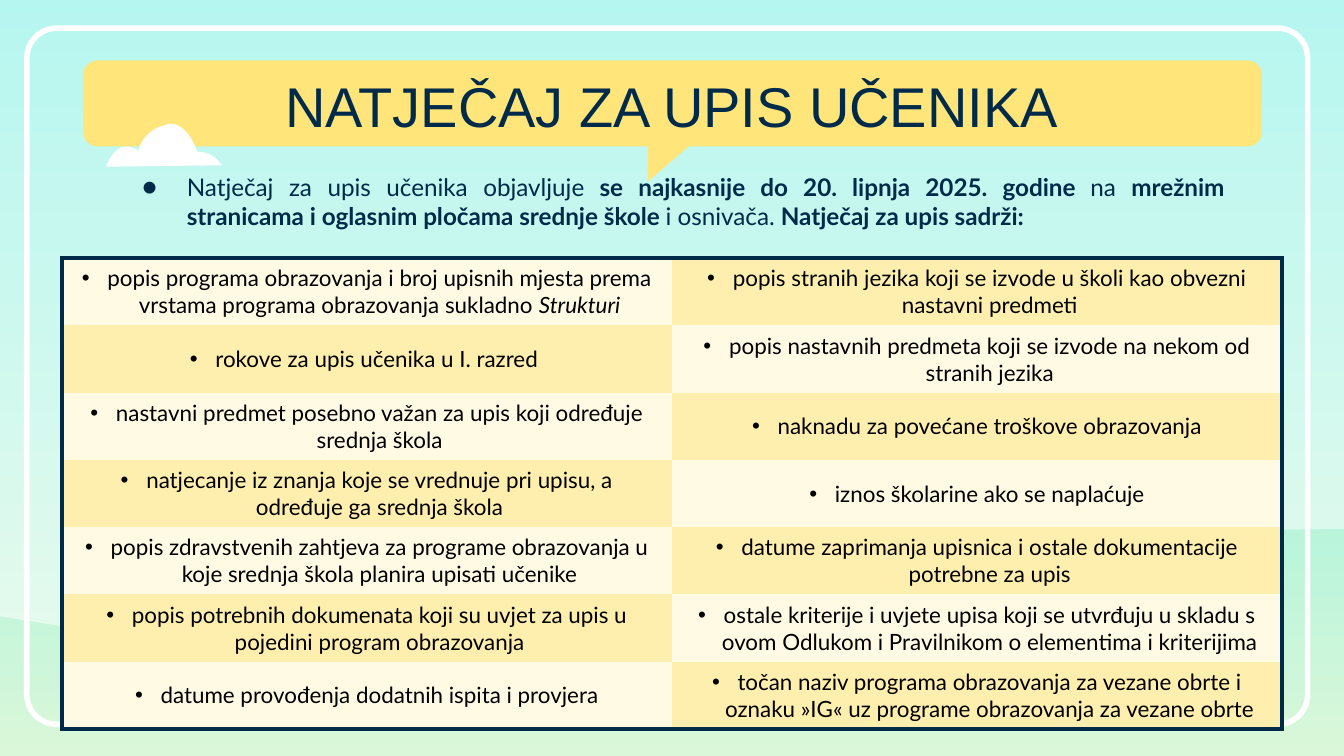
from lxml import etree
from pptx import Presentation
from pptx.dml.color import RGBColor
from pptx.enum.shapes import MSO_SHAPE
from pptx.enum.text import MSO_ANCHOR, MSO_AUTO_SIZE, PP_ALIGN
from pptx.oxml.ns import qn
from pptx.util import Inches, Pt

WAVE = MSO_SHAPE.FLOWCHART_DOCUMENT
ROUND = MSO_SHAPE.ROUNDED_RECTANGLE
WEDGE = MSO_SHAPE.ISOSCELES_TRIANGLE
MIDDLE, TOP = MSO_ANCHOR.MIDDLE, MSO_ANCHOR.TOP
CENTER, JUSTIFY = PP_ALIGN.CENTER, PP_ALIGN.JUSTIFY

THEME = {
    "sky": "67EEE0", "grass": "DAF7D9", "white": "FFFFFF", "sun": "FFE57A",
    "navy": "002A49", "black": "000000", "bands": ("FFFAE4", "FFEFAF"),
    "head": "Arial", "text": "Lato",
    "title": Pt(30), "lead": Pt(13), "cell": Pt(12),
    "frame": Pt(3), "edge": Pt(2.25),
}


def color(name):
    return RGBColor.from_string(THEME[name])


def write(para, runs, size, tint, sign, face, left, hang):
    """Fill a bulleted paragraph with (text, style) runs."""
    props = para._p.get_or_add_pPr()
    props.set("marL", str(Inches(left)))
    props.set("indent", str(Inches(-hang)))
    ink = etree.SubElement(props, qn("a:buClr"))
    etree.SubElement(ink, qn("a:srgbClr"), val=THEME[tint])
    etree.SubElement(props, qn("a:buFont"), typeface=THEME[face])
    etree.SubElement(props, qn("a:buChar"), char=sign)
    for words, style in runs:
        run = para.add_run()
        run.text = words
        run.font.name, run.font.size = THEME["text"], THEME[size]
        run.font.color.rgb = color(tint)
        run.font.bold, run.font.italic = style == "b", style == "i"


# Widescreen page, 16 to 9
deck = Presentation()
deck.slide_width = Inches(10)
deck.slide_height = Inches(10) * 9 // 16
slide = deck.slides.add_slide(deck.slide_layouts[1])
shapes = slide.shapes

# Sky gradient
back = slide.background.fill
back.gradient()
back.gradient_angle = 270
for stop, name in zip(back.gradient_stops, ("sky", "grass")):
    stop.color.rgb = color(name)

# Pale wave, speech bubble and frame
parts = [
    (WAVE, 0, 0, 10.01, 4.91, "white", None, 0),
    (WEDGE, 4.82, 1.05, 0.35, 0.3, "sun", 1, 180),
    (ROUND, 0.62, 0.45, 8.77, 0.64, "sun", 0.167, 0),
    (ROUND, 0.2, 0.21, 9.53, 5.18, None, 0.043, 0),
]
for kind, x, y, w, h, fill, bend, turn in parts:
    part = shapes.add_shape(kind, Inches(x), Inches(y), Inches(w), Inches(h))
    part.shadow.inherit = False
    part.rotation = turn
    if bend is not None:
        part.adjustments[0] = bend
    if fill:
        part.fill.solid()
        part.fill.fore_color.rgb = color(fill)
        part.line.fill.background()
    else:
        part.fill.background()
        part.line.color.rgb = color("white")
        part.line.width = THEME["frame"]
    if kind == WAVE:
        tone = part._element.spPr.find(".//" + qn("a:srgbClr"))
        etree.SubElement(tone, qn("a:alpha"), val="52000")

# Cloud: Bezier arcs sampled into short lines
arcs = [
    ((1.27, 0.92), (1.25, 0.92), (1.24, 0.93), (1.23, 0.93)),
    ((1.23, 0.93), (1.06, 0.97), (1.03, 1.12), (1.03, 1.12)),
    ((1.03, 1.12), (1, 1.1), (0.97, 1.09), (0.94, 1.09)),
    ((0.94, 1.09), (0.84, 1.09), (0.79, 1.24), (0.79, 1.24)),
    ((1.65, 1.23), (1.59, 1.14), (1.52, 1.13), (1.47, 1.13)),
    ((1.47, 1.13), (1.47, 1.13), (1.4, 0.92), (1.27, 0.92)),
]
dots = []
for arc in arcs:
    for step in range(11):
        t = step / 10
        mix = ((1 - t) ** 3, 3 * t * (1 - t) ** 2, 3 * t * t * (1 - t), t ** 3)
        dots.append([Inches(sum(m * p[axis] for m, p in zip(mix, arc)))
                     for axis in (0, 1)])
pen = shapes.build_freeform(*dots[0])
pen.add_line_segments(dots[1:], close=True)
cloud = pen.convert_to_shape()
cloud.shadow.inherit = False
cloud.fill.solid()
cloud.fill.fore_color.rgb = color("white")
cloud.line.fill.background()

# Title and body placeholders, brought in front of the scenery
title, body = shapes.title, slide.placeholders[1]
for holder, box, anchor in ((body, (0.79, 1.18, 8.42, 3.85), TOP),
                            (title, (1.23, 0.63, 7.54, 0.3), MIDDLE)):
    shapes._spTree.append(holder._element)
    holder.left, holder.top, holder.width, holder.height = map(Inches, box)
    frame = holder.text_frame
    frame.word_wrap, frame.auto_size = True, MSO_AUTO_SIZE.NONE
    frame.vertical_anchor = anchor
    frame.margin_left = frame.margin_right = Inches(0.1)
    frame.margin_top = frame.margin_bottom = Inches(0.1)

para = title.text_frame.paragraphs[0]
para.alignment = CENTER
run = para.add_run()
run.text = "NATJEČAJ ZA UPIS UČENIKA"
run.font.name, run.font.size = THEME["head"], THEME["title"]
run.font.color.rgb = color("navy")

para = body.text_frame.paragraphs[0]
para.alignment, para.space_before = JUSTIFY, Pt(0)
write(para, [
    ("Natječaj za upis učenika objavljuje ", ""),
    ("se najkasnije do 20. lipnja 2025. godine ", "b"),
    ("na ", ""),
    ("mrežnim stranicama i oglasnim pločama srednje škole", "b"),
    (" i osnivača. ", ""),
    ("Natječaj za upis sadrži:", "b"),
], "lead", "navy", "●", "text", 0.5, 0.33)

# Table of the call's contents
rows = [
    ("popis programa obrazovanja i broj upisnih mjesta prema vrstama programa obrazovanja sukladno |Strukturi",
     "popis stranih jezika koji se izvode u školi kao obvezni nastavni predmeti"),
    ("rokove za upis učenika u I. razred ",
     "popis nastavnih predmeta koji se izvode na nekom od stranih jezika"),
    ("nastavni predmet posebno važan za upis koji određuje srednja škola",
     "naknadu za povećane troškove obrazovanja"),
    ("natjecanje iz znanja koje se vrednuje pri upisu, a određuje ga srednja škola",
     "iznos školarine ako se naplaćuje"),
    ("popis zdravstvenih zahtjeva za programe obrazovanja u koje srednja škola planira upisati učenike",
     "datume zaprimanja upisnica i ostale dokumentacije potrebne za upis"),
    ("popis potrebnih dokumenata koji su uvjet za upis u pojedini program obrazovanja",
     "ostale kriterije i uvjete upisa koji se utvrđuju u skladu s ovom Odlukom i Pravilnikom o elementima i kriterijima"),
    ("datume provođenja dodatnih ispita i provjera",
     "točan naziv programa obrazovanja za vezane obrte i oznaku »IG« uz programe obrazovanja za vezane obrte"),
]
grid = shapes.add_table(len(rows), 2, Inches(0.46), Inches(1.92),
                        Inches(9.08), Inches(3.5)).table
grid.first_row = grid.horz_banding = False
for r, row in enumerate(rows):
    for c, words in enumerate(row):
        cell = grid.cell(r, c)
        cell.vertical_anchor = MIDDLE
        # Navy line on outer sides only; "|" starts an italic run
        props = cell._tc.get_or_add_tcPr()
        sides = {"L": c == 0, "R": c == 1, "T": r == 0,
                 "B": r == len(rows) - 1}
        for side, outer in sides.items():
            edge = etree.SubElement(props, qn("a:ln" + side),
                                    w=str(THEME["edge"] if outer else 0))
            if outer:
                ink = etree.SubElement(edge, qn("a:solidFill"))
                etree.SubElement(ink, qn("a:srgbClr"), val=THEME["navy"])
            else:
                etree.SubElement(edge, qn("a:noFill"))
        cell.fill.solid()
        band = THEME["bands"][(r + c) % 2]
        cell.fill.fore_color.rgb = RGBColor.from_string(band)
        para = cell.text_frame.paragraphs[0]
        para.alignment = CENTER
        write(para, zip(words.split("|"), ("", "i")),
              "cell", "black", "•", "head", 0.19, 0.19)

deck.save("out.pptx")
